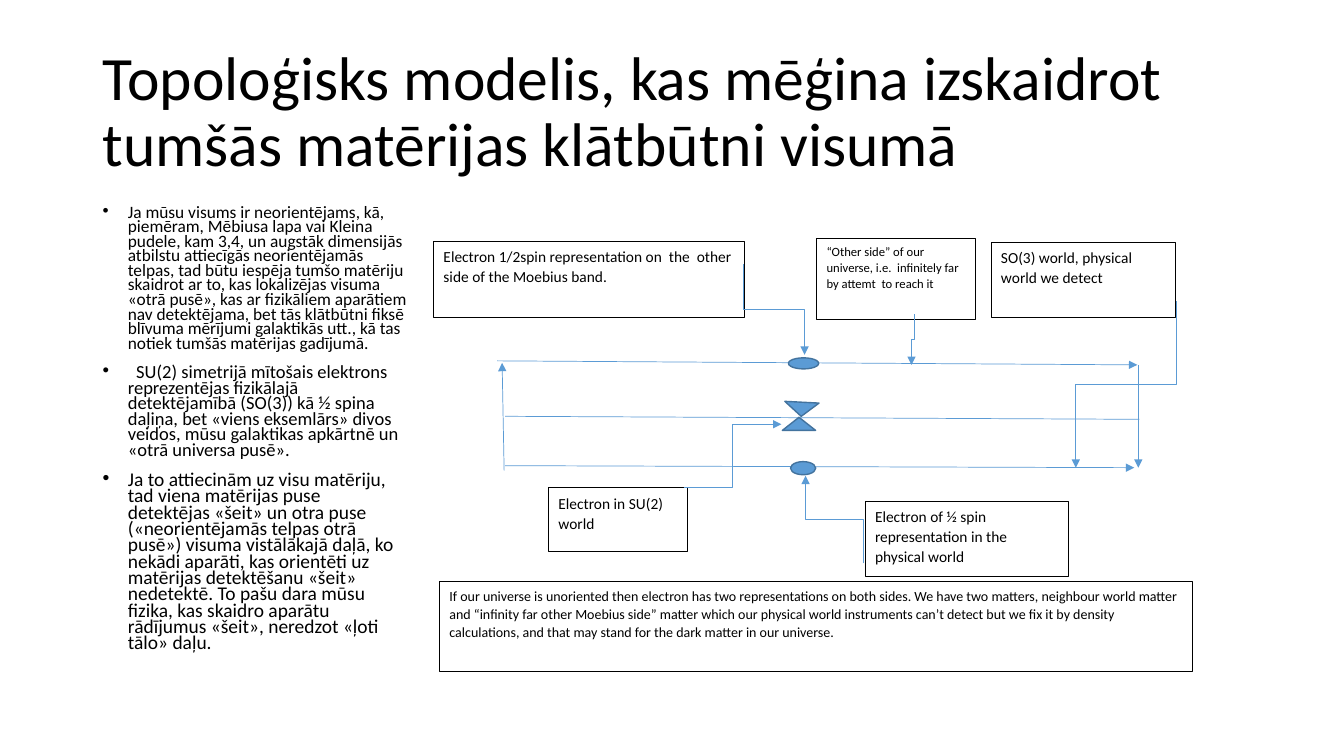
"""Builds a slide on a topological model of dark matter."""
from dataclasses import dataclass

from lxml.etree import SubElement
from pptx import Presentation
from pptx.dml.color import RGBColor
from pptx.enum.shapes import MSO_CONNECTOR, MSO_SHAPE
from pptx.enum.text import MSO_ANCHOR
from pptx.oxml.ns import qn
from pptx.util import Inches, Pt


@dataclass(frozen=True)
class Theme:
    font: str = "Calibri"
    ink: RGBColor = RGBColor(0x00, 0x00, 0x00)
    paper: RGBColor = RGBColor(0xFF, 0xFF, 0xFF)
    blue: RGBColor = RGBColor(0x5B, 0x9B, 0xD5)
    outline: RGBColor = RGBColor(0x43, 0x73, 0x9E)
    title: float = 44
    label: float = 11
    summary: float = 10
    small: float = 9
    thin: float = 0.5


theme = Theme()


def write(paragraph, text, size, spacing, before=0, after=0):
    paragraph.text = text
    paragraph.line_spacing = spacing
    paragraph.space_before, paragraph.space_after = Pt(before), Pt(after)
    for run in paragraph.runs:
        run.font.name, run.font.size = theme.font, Pt(size)
        run.font.color.rgb = theme.ink


def draw_line(kind, x1, y1, x2, y2, arrow=True):
    line = slide.shapes.add_connector(kind, Inches(x1), Inches(y1), Inches(x2), Inches(y2))
    line.line.color.rgb, line.line.width = theme.blue, Pt(theme.thin)
    properties = line._element.spPr
    if arrow:
        SubElement(properties.find(qn("a:ln")), qn("a:tailEnd"), type="triangle")
    SubElement(properties, qn("a:effectLst"))
    return line


deck = Presentation()
deck.slide_width, deck.slide_height = Inches(13.33), Inches(7.5)
slide = deck.slides.add_slide(deck.slide_layouts[6])

heading = slide.shapes.add_textbox(Inches(0.92), Inches(0.4), Inches(11.5), Inches(1.45)).text_frame
heading.word_wrap = True
heading.vertical_anchor = MSO_ANCHOR.MIDDLE
write(heading.paragraphs[0], "Topoloģisks modelis, kas mēģina izskaidrot tumšās matērijas klātbūtni visumā",
      theme.title, 0.9)

arguments = [
    ("Ja mūsu visums ir neorientējams, kā, piemēram, Mēbiusa lapa vai Kleina pudele, kam 3,4, "
     "un augstāk dimensijās atbilstu attiecīgās neorientējamās telpas, tad būtu iespēja tumšo "
     "matēriju skaidrot ar to, kas lokalizējas visuma «otrā pusē», kas ar fizikāliem aparātiem "
     "nav detektējama, bet tās klātbūtni fiksē blīvuma mērījumi galaktikās utt., kā tas notiek "
     "tumšās matērijas gadījumā.", 12.4),
    ("  SU(2) simetrijā mītošais elektrons reprezentējas fizikālajā detektējamībā (SO(3)) kā "
     "½ spina daļiņa, bet «viens eksemlārs» divos veidos, mūsu galaktikas apkārtnē un "
     "«otrā universa pusē».", 13.2),
    ("Ja to attiecinām uz visu matēriju, tad viena matērijas puse detektējas «šeit» un otra puse "
     "(«neorientējamās telpas otrā pusē») visuma vistālākajā daļā, ko nekādi aparāti, kas "
     "orientēti uz matērijas detektēšanu «šeit» nedetektē. To pašu dara mūsu fizika, kas skaidro "
     "aparātu rādījumus «šeit», neredzot «ļoti tālo» daļu.", 13.9),
]
body = slide.shapes.add_textbox(Inches(0.92), Inches(2), Inches(3.22), Inches(5)).text_frame
body.word_wrap = True
for index, (argument, size) in enumerate(arguments):
    paragraph = body.add_paragraph() if index else body.paragraphs[0]
    write(paragraph, argument, size, 0.7, before=10)
    settings = paragraph._p.get_or_add_pPr()
    settings.set("marL", str(Inches(0.25)))
    settings.set("indent", str(Inches(-0.25)))
    SubElement(settings, qn("a:buFont"), typeface="Arial")
    SubElement(settings, qn("a:buChar"), char="•")

band_edges = [
    (4.93, 3.58, 11.28, 3.62, True),
    (5.01, 4.62, 11.25, 4.64, True),
    (5, 4.67, 4.98, 3.6, True),
    (11.29, 3.62, 11.29, 4.64, True),
    (5.01, 4.13, 11.3, 4.16, False),
]
for *ends, arrow in band_edges:
    draw_line(MSO_CONNECTOR.STRAIGHT, *ends, arrow=arrow)

electrons = [
    (MSO_SHAPE.ISOSCELES_TRIANGLE, 7.76, 4.14, 0.33, 0.13, 0),
    (MSO_SHAPE.ISOSCELES_TRIANGLE, 7.78, 3.99, 0.34, 0.14, 182.9),
    (MSO_SHAPE.OVAL, 7.84, 4.58, 0.25, 0.13, 0),
    (MSO_SHAPE.OVAL, 7.82, 3.55, 0.3, 0.11, 0),
]
for kind, left, top, width, height, angle in electrons:
    electron = slide.shapes.add_shape(kind, Inches(left), Inches(top), Inches(width), Inches(height))
    electron.rotation = angle
    electron.shadow.inherit = False
    electron.fill.solid()
    electron.fill.fore_color.rgb = theme.blue
    electron.line.color.rgb, electron.line.width = theme.outline, Pt(1)

labels = [
    (5.44, 4.84, 1.38, 0.63, theme.label, "Electron in SU(2) world"),
    (8.58, 4.97, 2.02, 0.75, theme.label, "Electron of ½ spin representation in the  physical world"),
    (4.3, 2.39, 3.08, 0.76, theme.label,
     "Electron 1/2spin representation on  the  other side of the Moebius band."),
    (4.36, 5.77, 7.47, 0.89, theme.summary,
     "If our universe is unoriented then electron has two representations on both sides. We have "
     "two matters, neighbour world matter and “infinity far other Moebius side” matter which our "
     "physical world instruments can’t detect but we fix it by density calculations, and that may "
     "stand for the dark matter in our universe."),
    (9.83, 2.4, 1.83, 0.75, theme.label, "SO(3) world, physical world we detect"),
    (8.1, 2.36, 1.57, 0.81, theme.small,
     "“Other side” of our universe, i.e.  infinitely far by attemt  to reach it"),
]
for left, top, width, height, size, text in labels:
    label = slide.shapes.add_textbox(Inches(left), Inches(top), Inches(width), Inches(height))
    label.fill.solid()
    label.fill.fore_color.rgb = theme.paper
    label.line.color.rgb, label.line.width = theme.ink, Pt(theme.thin)
    label.text_frame.word_wrap = True
    write(label.text_frame.paragraphs[0], text, size, 1.07, after=8)

draw_line(MSO_CONNECTOR.ELBOW, 6.78, 4.84, 7.75, 4.21)

upright_pointers = [
    (8.56, 5.59, 7.99, 4.72),
    (7.37, 2.62, 7.98, 3.52),
    (11.67, 2.99, 10.67, 4.64),
    (9.07, 3.12, 9.04, 3.62),
]
for x1, y1, x2, y2 in upright_pointers:
    center_x, center_y = (x1 + x2) / 2, (y1 + y2) / 2
    half_run, half_rise = abs(y2 - y1) / 2, abs(x2 - x1) / 2
    if (x2 > x1) == (y2 > y1):
        half_rise = -half_rise
    pointer = draw_line(MSO_CONNECTOR.ELBOW, center_x - half_run, center_y - half_rise,
                        center_x + half_run, center_y + half_rise)
    quarter_turns = 1 if y2 > y1 else 3
    pointer._element.spPr.find(qn("a:xfrm")).set("rot", str(quarter_turns * 90 * 60000))

deck.save("out.pptx")
